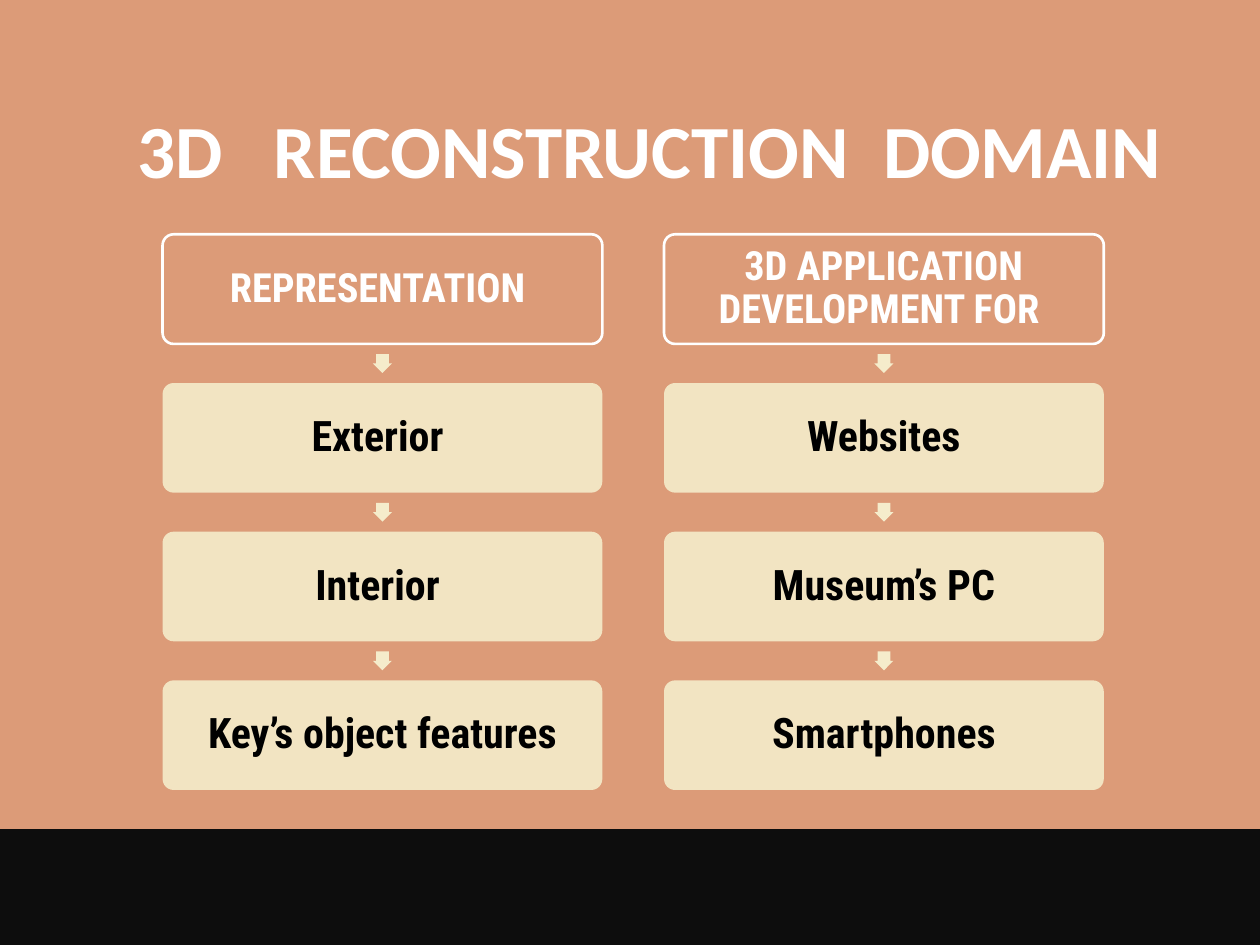
from lxml.etree import SubElement
from pptx import Presentation
from pptx.dml.color import RGBColor
from pptx.enum.shapes import MSO_SHAPE
from pptx.enum.text import MSO_ANCHOR, PP_ALIGN
from pptx.oxml.ns import qn
from pptx.util import Inches, Pt

TITLE_WORDS = ["3D", "RECONSTRUCTION", "DOMAIN"]
TITLE_EXTRA_GAPS = [19.4, 9.7]
DOMAINS = [
    ("REPRESENTATION ", ["Exterior ", "Interior ", "Key’s object features"]),
    ("3D APPLICATION DEVELOPMENT FOR ", ["Websites", "Museum’s PC", "Smartphones"]),
]
CLAY, CREAM, WHITE, BLACK, FOOTER = "DC9B78", "F5ECCB", "FFFFFF", "000000", "0D0D0D"
LEFT, TOP = 1.29, 1.86
COLUMN_PITCH, ROW_PITCH = 3.98, 1.18
CARD_WIDTH, CARD_HEIGHT, ARROW_SIZE = 3.49, 0.87, 0.15
FOOTER_HEIGHT = 0.92


def paint(fill, color):
    fill.solid()
    fill.fore_color.rgb = RGBColor.from_string(color)


def style(font, name, size, color):
    font.name, font.size, font.bold = name, Pt(size), True
    font.color.rgb = RGBColor.from_string(color)


def set_insets(frame, horizontal, vertical):
    frame.margin_left = frame.margin_right = Inches(horizontal)
    frame.margin_top = frame.margin_bottom = Inches(vertical)


def add_block(slide, preset, left, top, width, height, color):
    block = slide.shapes.add_shape(preset, *map(Inches, (left, top, width, height)))
    block.shadow.inherit = False
    paint(block.fill, color)
    block.line.fill.background()
    return block


def add_card(slide, label, left, top, is_heading):
    card = add_block(slide, MSO_SHAPE.ROUNDED_RECTANGLE, left, top,
                     CARD_WIDTH, CARD_HEIGHT, CLAY if is_heading else CREAM)
    card.adjustments[0] = 0.1
    if is_heading:
        paint(card.line.fill, WHITE)
        card.line.width = Pt(1.5)
    else:
        tint = card.fill._xPr.find(qn("a:solidFill"))[0]
        SubElement(tint, qn("a:alpha"), val="90000")
    frame = card.text_frame
    frame.text = label
    frame.word_wrap = True
    frame.vertical_anchor = MSO_ANCHOR.MIDDLE
    set_insets(frame, 0.03, 0.03)
    paragraph = frame.paragraphs[0]
    paragraph.alignment = PP_ALIGN.CENTER
    paragraph.line_spacing = 0.9
    style(paragraph.runs[0].font, "Roboto Condensed",
          23 if is_heading else 24, WHITE if is_heading else BLACK)


def add_arrow(slide, left, top):
    arrow = add_block(slide, MSO_SHAPE.RIGHT_ARROW, left, top, ARROW_SIZE, ARROW_SIZE, CREAM)
    arrow.adjustments[0], arrow.adjustments[1] = 0.67, 0.5
    arrow.rotation = 90


def set_title(title):
    title.left, title.top, title.width, title.height = map(Inches, (0, 0, 10.31, 1.54))
    frame = title.text_frame
    frame.word_wrap = True
    frame.vertical_anchor = MSO_ANCHOR.BOTTOM
    set_insets(frame, 0.05, 0)
    paragraph = frame.paragraphs[0]
    paragraph.alignment = PP_ALIGN.CENTER
    for word, extra_gap in zip(TITLE_WORDS, TITLE_EXTRA_GAPS + [None]):
        paragraph.add_run().text = word
        if extra_gap:
            space = paragraph.add_run()
            space.text = " "
            space._r.get_or_add_rPr().set("spc", str(round(extra_gap * 100)))
    for run in paragraph.runs:
        style(run.font, "Calibri", 42.9, WHITE)


def main():
    deck = Presentation()
    deck.slide_width, deck.slide_height = Inches(10), Inches(7.5)
    slide = deck.slides.add_slide(deck.slide_layouts[5])
    paint(slide.background.fill, CLAY)
    set_title(slide.shapes.title)
    arrow_inset = (CARD_WIDTH - ARROW_SIZE) / 2
    arrow_drop = (CARD_HEIGHT + ROW_PITCH - ARROW_SIZE) / 2
    for column, (heading, topics) in enumerate(DOMAINS):
        left = LEFT + column * COLUMN_PITCH
        for row, label in enumerate([heading, *topics]):
            top = TOP + row * ROW_PITCH
            add_card(slide, label, left, top, row == 0)
            if row < len(topics):
                add_arrow(slide, left + arrow_inset, top + arrow_drop)
    add_block(slide, MSO_SHAPE.RECTANGLE, 0, 7.5 - FOOTER_HEIGHT, 10, FOOTER_HEIGHT, FOOTER)
    deck.save("out.pptx")


if __name__ == "__main__":
    main()
